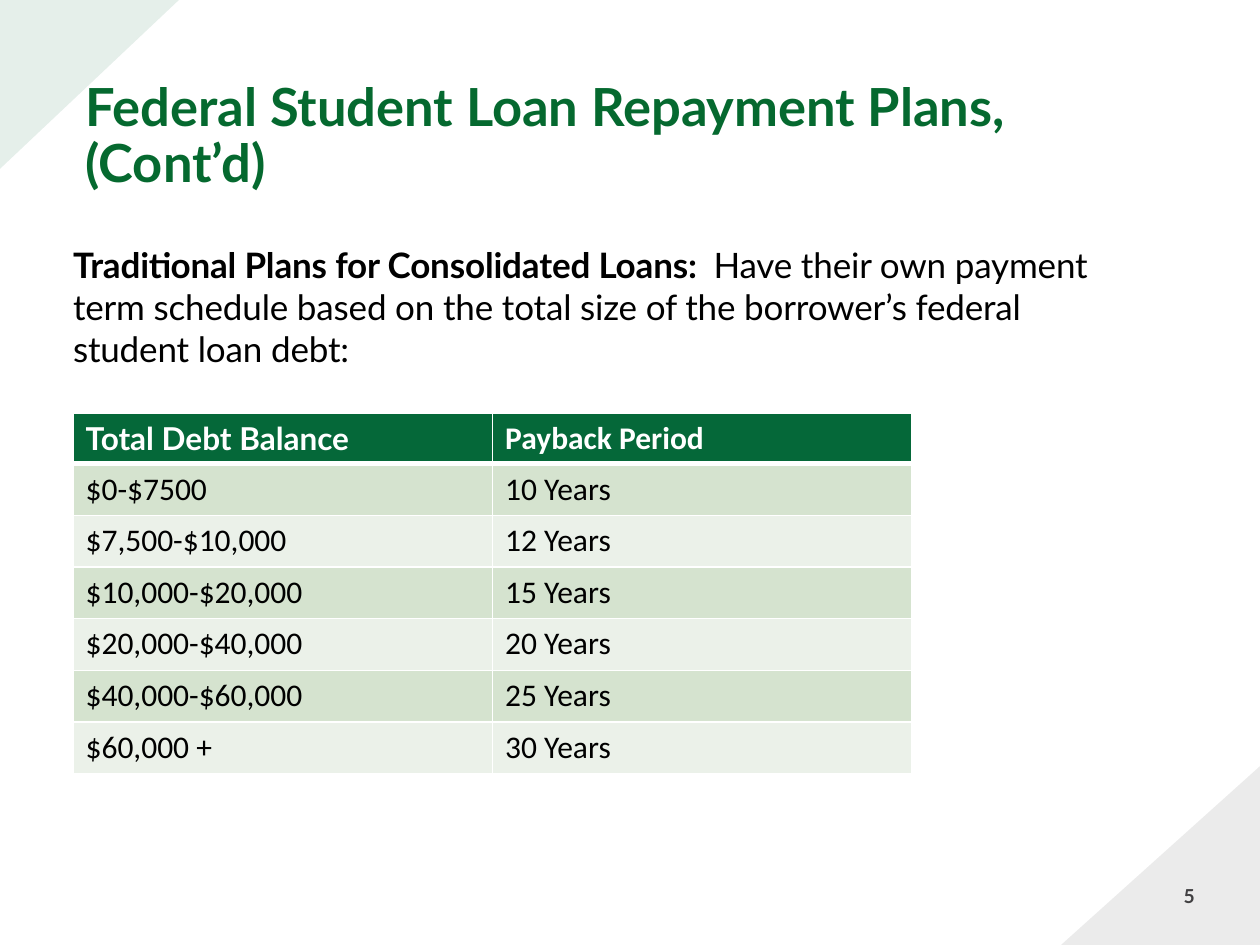
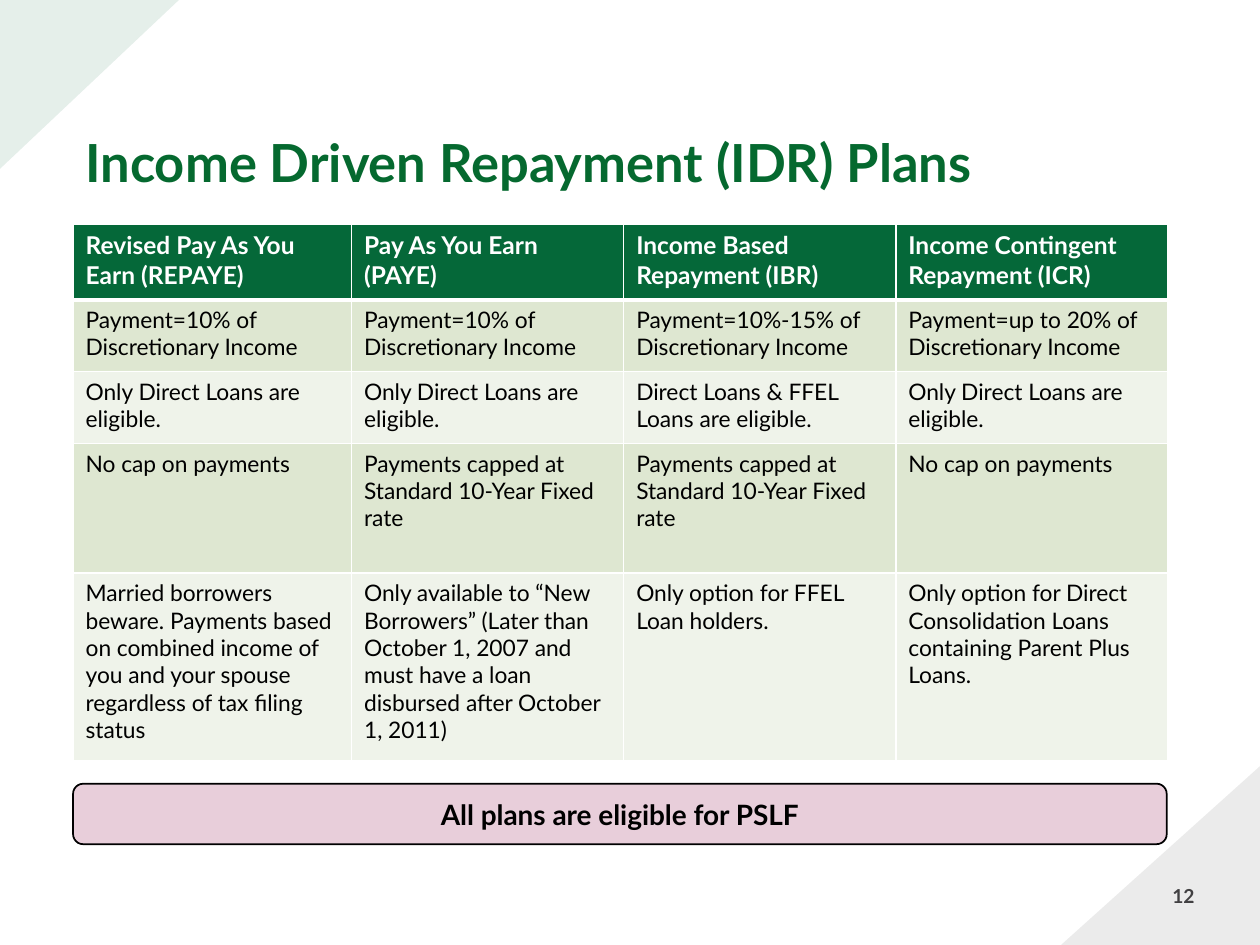
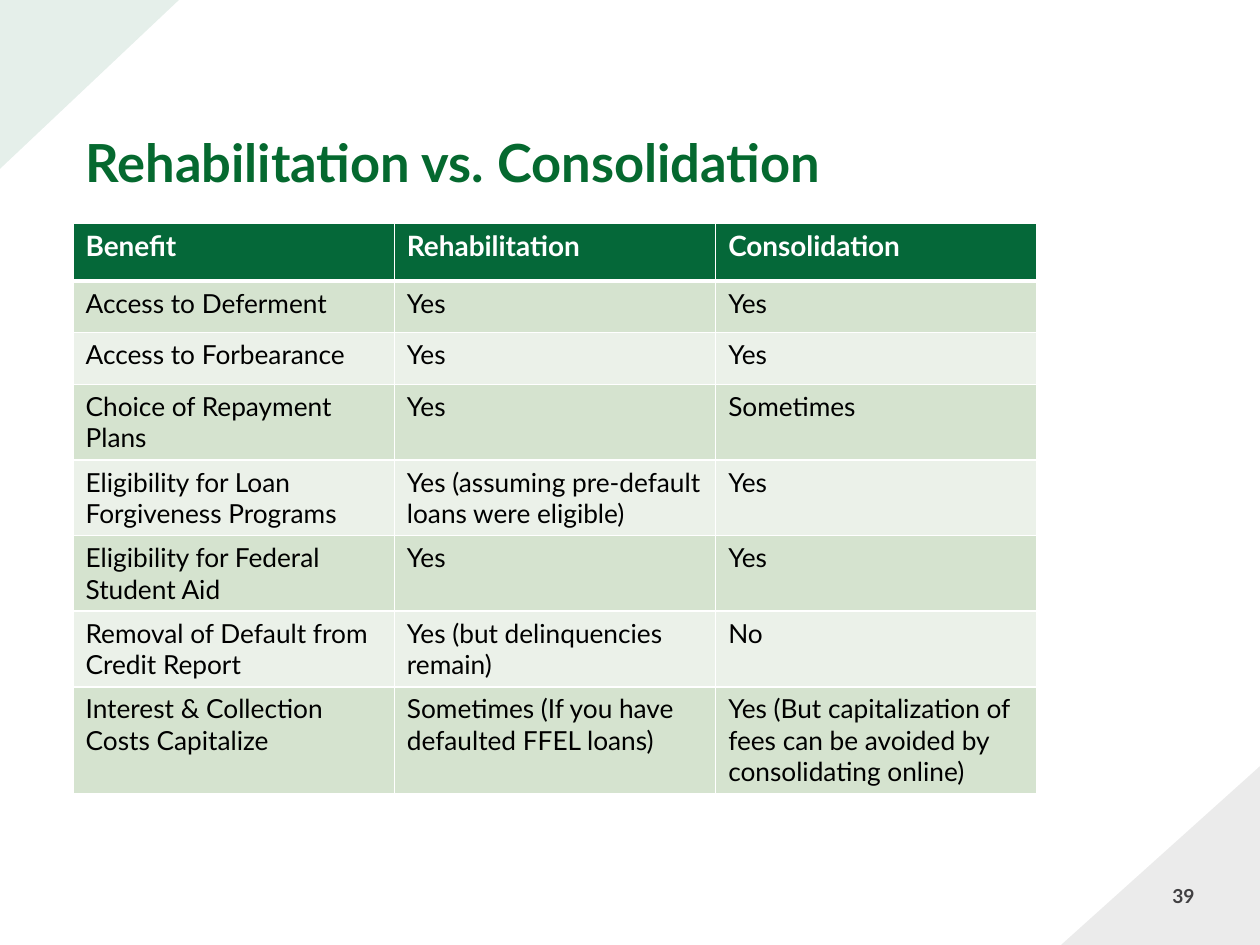
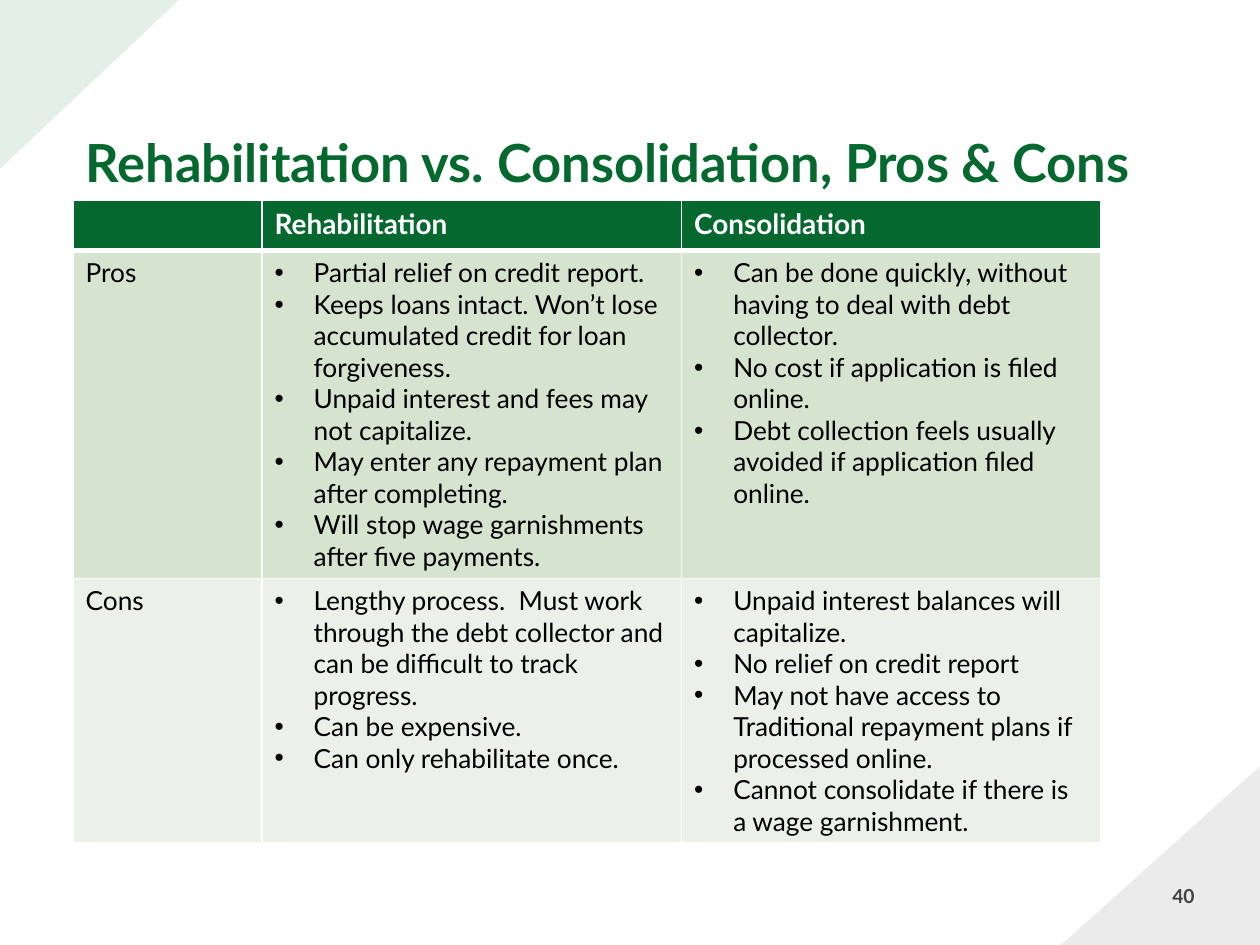
import pptx
import pptx.dml.color
import pptx.enum.shapes
import pptx.enum.text
import pptx.oxml
import pptx.oxml.ns
import pptx.util
from lxml import etree
from pptx.util import Inches

COLORS = {
    "white": "FFFFFF",
    "black": "000000",
    "gray": "414042",
    "green": "056839",
    "title_green": "05692F",
    "band_dark": "D5E3CF",
    "band_light": "EBF1E9",
    "olive_dark": "DEE7D1",
    "olive_light": "EFF3EA",
    "pink": "E8CEDA",
}
FONT = "Lato"
LEFT = 0.58
GREEN_BANDS = ("band_dark", "band_light")
OLIVE_BANDS = ("olive_dark", "olive_light")
BULLET_INDENT = Inches(0.31)


def rgb(color):
    return pptx.dml.color.RGBColor.from_string(COLORS[color])


def add_xml(parent, tag, **attributes):
    return etree.SubElement(parent, pptx.oxml.ns.qn(tag), **attributes)


def style_font(font, size, color, bold=False, name=FONT):
    font.name = name
    font.size = pptx.util.Pt(size)
    font.bold = bold
    font.color.rgb = rgb(color)


def style_paragraph(paragraph, *font_style):
    for run in paragraph.runs:
        style_font(run.font, *font_style)


def add_text_box(slide, left, top, width, height):
    box = slide.shapes.add_textbox(
        Inches(left), Inches(top), Inches(width), Inches(height))
    box.text_frame.word_wrap = True
    return box.text_frame


def add_corner(slide, left, top, width, height, rotation, color):
    """Add a pale right triangle that fills a corner of the slide."""
    corner = slide.shapes.add_shape(
        pptx.enum.shapes.MSO_SHAPE.RIGHT_TRIANGLE,
        Inches(left), Inches(top), Inches(width), Inches(height))
    corner.shadow.inherit = False
    corner.rotation = rotation
    corner.line.fill.background()
    corner.fill.solid()
    corner.fill.fore_color.rgb = rgb(color)
    color_element = corner.fill._xPr.find(".//" + pptx.oxml.ns.qn("a:srgbClr"))
    add_xml(color_element, "a:alpha", val="10000")
    return corner


def add_title(slide, title):
    frame = add_text_box(slide, LEFT, 0.25, 8.83, 1.34)
    frame.vertical_anchor = pptx.enum.text.MSO_ANCHOR.BOTTOM
    frame.text = title
    paragraph = frame.paragraphs[0]
    paragraph.line_spacing = 0.9
    style_paragraph(paragraph, 30, "title_green", True)


def add_page_number(slide, number):
    frame = add_text_box(slide, 7.33, 6.97, 2.25, 0.4)
    frame.text = str(number)
    paragraph = frame.paragraphs[0]
    paragraph.alignment = pptx.enum.text.PP_ALIGN.RIGHT
    style_paragraph(paragraph, 11, "gray", True)


def add_page(presentation, title, number):
    """Add a blank slide with the shared corners, title and page number."""
    slide = presentation.slides.add_slide(presentation.slide_layouts[6])
    bottom_corner = add_corner(slide, 8.42, 6.08, 1.58, 1.42, 180, "gray")
    bottom_corner._element.spPr.xfrm.set("flipV", "1")
    add_corner(slide, 0.04, -0.04, 1.34, 1.42, 90, "green")
    add_title(slide, title)
    add_page_number(slide, number)
    return slide


def set_borders(cell, row_index):
    """Draw thin white borders, with a thick one below the header row."""
    top = 3 if row_index == 1 else 1
    bottom = 3 if row_index == 0 else 1
    properties = cell._tc.get_or_add_tcPr()
    for side, points in (("L", 1), ("R", 1), ("T", top), ("B", bottom)):
        line = add_xml(properties, f"a:ln{side}", w=str(pptx.util.Pt(points)))
        fill = add_xml(line, "a:solidFill")
        add_xml(fill, "a:srgbClr", val=COLORS["white"])


def add_bullet(paragraph):
    properties = paragraph._p.get_or_add_pPr()
    properties.set("marL", str(BULLET_INDENT))
    properties.set("indent", str(-BULLET_INDENT))
    add_xml(properties, "a:buFont", typeface="Arial")
    add_xml(properties, "a:buChar", char="•")


def fill_cell(cell, content, *font_style):
    """Write a string as plain text, or a list of strings as bullets."""
    if not content:
        return
    bulleted = isinstance(content, list)
    cell.text_frame.text = "\n".join(content) if bulleted else content
    for paragraph in cell.text_frame.paragraphs:
        if bulleted:
            add_bullet(paragraph)
        style_paragraph(paragraph, *font_style)


def add_banded_table(slide, top, column_widths, row_heights, rows,
                     header_size, body_size, bands=GREEN_BANDS,
                     header_fill="green", body_font=FONT):
    table = slide.shapes.add_table(
        len(rows), len(column_widths), Inches(LEFT), Inches(top),
        Inches(sum(column_widths)), Inches(sum(row_heights))).table
    table.horz_banding = False
    for column, width in zip(table.columns, column_widths):
        column.width = Inches(width)
    for row_index, (contents, height) in enumerate(zip(rows, row_heights)):
        table.rows[row_index].height = Inches(height)
        is_header = row_index == 0
        fill = header_fill if is_header else bands[(row_index - 1) % 2]
        for column_index, content in enumerate(contents):
            cell = table.cell(row_index, column_index)
            set_borders(cell, row_index)
            cell.fill.solid()
            cell.fill.fore_color.rgb = rgb(fill)
            if is_header:
                fill_cell(cell, content, header_size, "white", True)
            else:
                fill_cell(cell, content, body_size, "black", False, body_font)
    return table


def add_introduction(slide, heading, explanation):
    frame = add_text_box(slide, LEFT, 1.92, 8.46, 1.02)
    frame.margin_left = frame.margin_right = frame.margin_bottom = 0
    frame.margin_top = Inches(0.01)
    paragraph = frame.paragraphs[0]
    for text, bold in ((heading, True), (explanation, False)):
        run = paragraph.add_run()
        run.text = text
        style_font(run.font, 20, "black", bold)
        run._r.get_or_add_rPr().set("spc", "-10")


def add_callout(slide, text):
    callout = slide.shapes.add_shape(
        pptx.enum.shapes.MSO_SHAPE.ROUNDED_RECTANGLE,
        Inches(LEFT), Inches(6.22), Inches(8.68), Inches(0.48))
    callout.shadow.inherit = False
    callout.fill.solid()
    callout.fill.fore_color.rgb = rgb("pink")
    callout.line.color.rgb = rgb("black")
    callout.line.width = pptx.util.Pt(1)
    frame = callout.text_frame
    frame.vertical_anchor = pptx.enum.text.MSO_ANCHOR.MIDDLE
    frame.text = text
    paragraph = frame.paragraphs[0]
    paragraph.alignment = pptx.enum.text.PP_ALIGN.CENTER
    style_paragraph(paragraph, 16, "black", True)


def add_consolidated_plans(presentation):
    slide = add_page(
        presentation, "Federal Student Loan Repayment Plans, (Cont’d)", 5)
    add_introduction(
        slide, "Traditional Plans for Consolidated Loans:  ",
        "Have their own payment term schedule based on the total size of "
        "the borrower’s federal student loan debt:")
    rows = [
        ("Total Debt Balance", "Payback Period"),
        ("$0-$7500", "10 Years"),
        ("$7,500-$10,000", "12 Years"),
        ("$10,000-$20,000", "15 Years"),
        ("$20,000-$40,000", "20 Years"),
        ("$40,000-$60,000", "25 Years"),
        ("$60,000 +", "30 Years"),
    ]
    table = add_banded_table(
        slide, 3.28, [3.33] * 2, [0.39] + [0.41] * 6, rows, 18, 18,
        body_font="Calibri")
    period_header = table.cell(0, 1).text_frame.paragraphs[0]
    style_paragraph(period_header, 18, "white", True, "Calibri")


def add_income_driven_plans(presentation):
    slide = add_page(presentation, "Income Driven Repayment (IDR) Plans", 12)
    direct_only = "Only Direct Loans are eligible."
    ten_percent = "Payment=10% of Discretionary Income"
    no_cap = "No cap on payments"
    capped = "Payments capped at Standard 10-Year Fixed rate"
    rows = [
        ("Revised Pay As You Earn (REPAYE)", "Pay As You Earn (PAYE)",
         "Income Based Repayment (IBR)", "Income Contingent Repayment (ICR)"),
        (ten_percent, ten_percent, "Payment=10%-15% of Discretionary Income",
         "Payment=up to 20% of Discretionary Income"),
        (direct_only, direct_only, "Direct Loans & FFEL Loans are eligible.",
         direct_only),
        (no_cap, capped, capped, no_cap),
        ("Married borrowers beware. Payments based on combined income of you "
         "and your spouse regardless of tax filing status",
         "Only available to “New Borrowers” (Later than October 1, 2007 and "
         "must have a loan disbursed after October 1, 2011)",
         "Only option for FFEL Loan holders.",
         "Only option for Direct Consolidation Loans containing Parent Plus "
         "Loans."),
    ]
    add_banded_table(
        slide, 1.78, [2.21] + [2.16] * 3, [0.6, 0.57, 0.57, 1.03, 1.49],
        rows, 14, 13, bands=OLIVE_BANDS)
    add_callout(slide, "All plans are eligible for PSLF")


def add_benefit_comparison(presentation):
    slide = add_page(presentation, "Rehabilitation vs. Consolidation", 39)
    rows = [
        ("Benefit", "Rehabilitation", "Consolidation"),
        ("Access to Deferment", "Yes", "Yes"),
        ("Access to Forbearance", "Yes", "Yes"),
        ("Choice of Repayment Plans", "Yes", "Sometimes"),
        ("Eligibility for Loan Forgiveness Programs",
         "Yes (assuming pre-default loans were eligible)", "Yes"),
        ("Eligibility for Federal Student Aid", "Yes", "Yes"),
        ("Removal of Default from Credit Report",
         "Yes (but delinquencies remain)", "No"),
        ("Interest & Collection Costs Capitalize",
         "Sometimes (If you have defaulted FFEL loans)",
         "Yes (But capitalization of fees can be avoided by consolidating "
         "online)"),
    ]
    add_banded_table(
        slide, 1.77, [2.55] * 3, [0.46] + [0.41] * 2 + [0.6] * 4 + [0.85],
        rows, 16, 15)


def add_pros_and_cons(presentation):
    slide = add_page(
        presentation, "Rehabilitation vs. Consolidation, Pros & Cons", 40)
    rows = [
        ("", "Rehabilitation", "Consolidation"),
        ("Pros",
         ["Partial relief on credit report.",
          "Keeps loans intact. Won’t lose accumulated credit for loan "
          "forgiveness.",
          "Unpaid interest and fees may not capitalize.",
          "May enter any repayment plan after completing.",
          "Will stop wage garnishments after five payments."],
         ["Can be done quickly, without having to deal with debt collector.",
          "No cost if application is filed online.",
          "Debt collection feels usually avoided if application filed "
          "online."]),
        ("Cons",
         ["Lengthy process.  Must work through the debt collector and can be "
          "difficult to track progress.",
          "Can be expensive.",
          "Can only rehabilitate once."],
         ["Unpaid interest balances will capitalize.",
          "No relief on credit report",
          "May not have access to Traditional repayment plans if processed "
          "online.",
          "Cannot consolidate if there is a wage garnishment."]),
    ]
    add_banded_table(
        slide, 1.59, [1.5, 3.33, 3.33], [0.4, 2.6, 2.1], rows, 16, 15,
        header_fill="title_green")


def main():
    presentation = pptx.Presentation()
    presentation.slide_width = Inches(10)
    presentation.slide_height = Inches(7.5)
    add_consolidated_plans(presentation)
    add_income_driven_plans(presentation)
    add_benefit_comparison(presentation)
    add_pros_and_cons(presentation)
    presentation.save("out.pptx")


if __name__ == "__main__":
    main()
